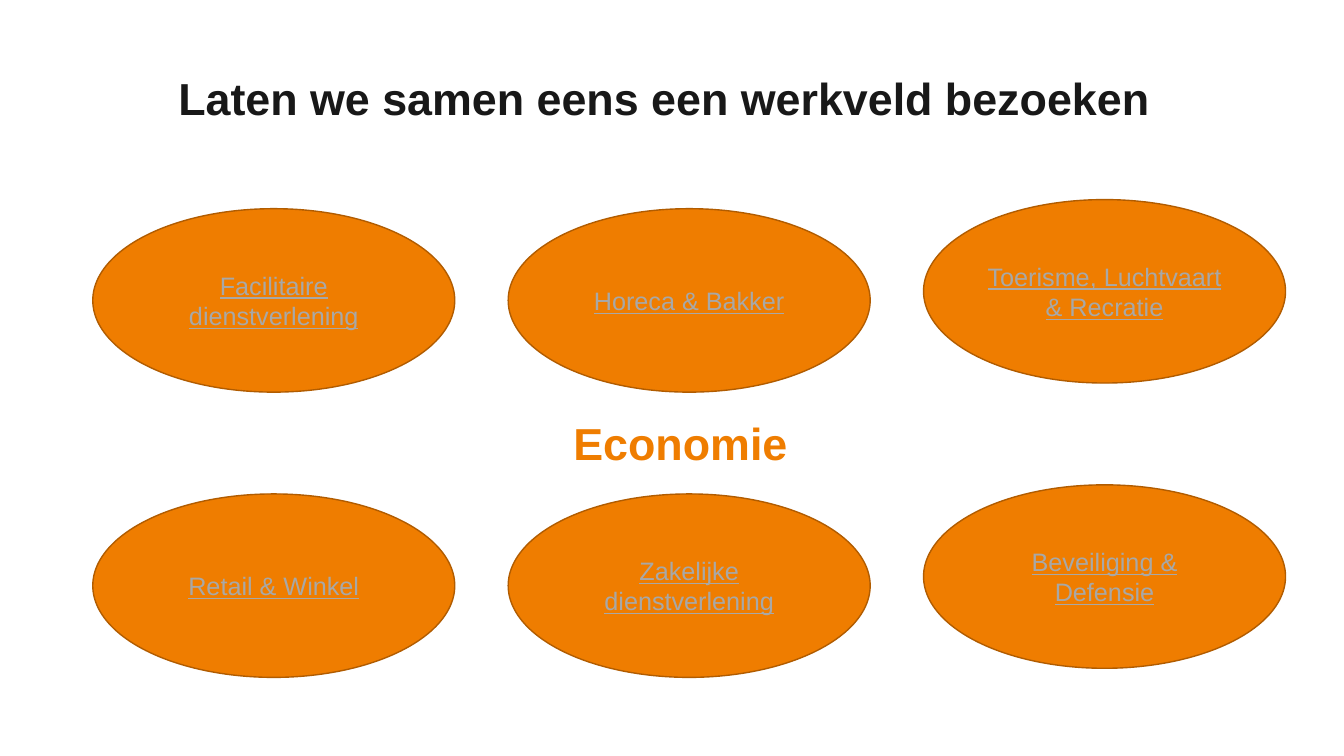
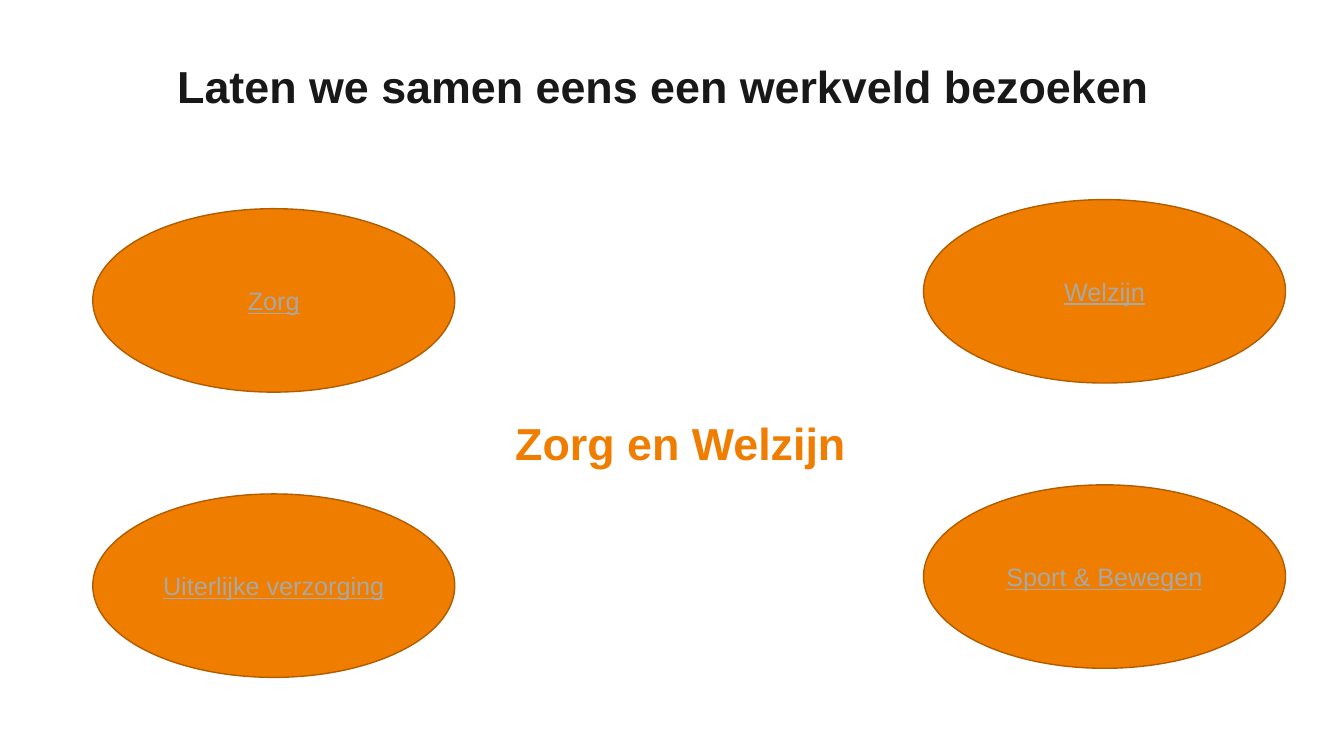
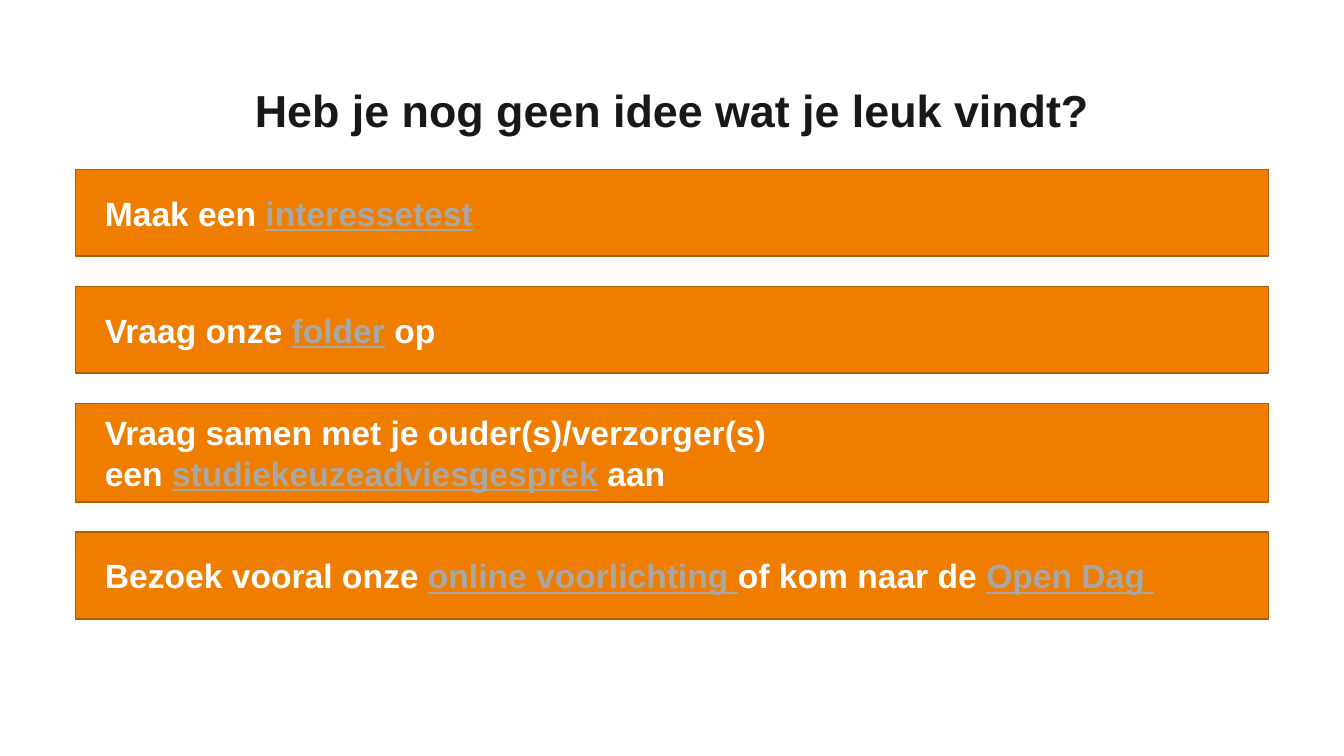
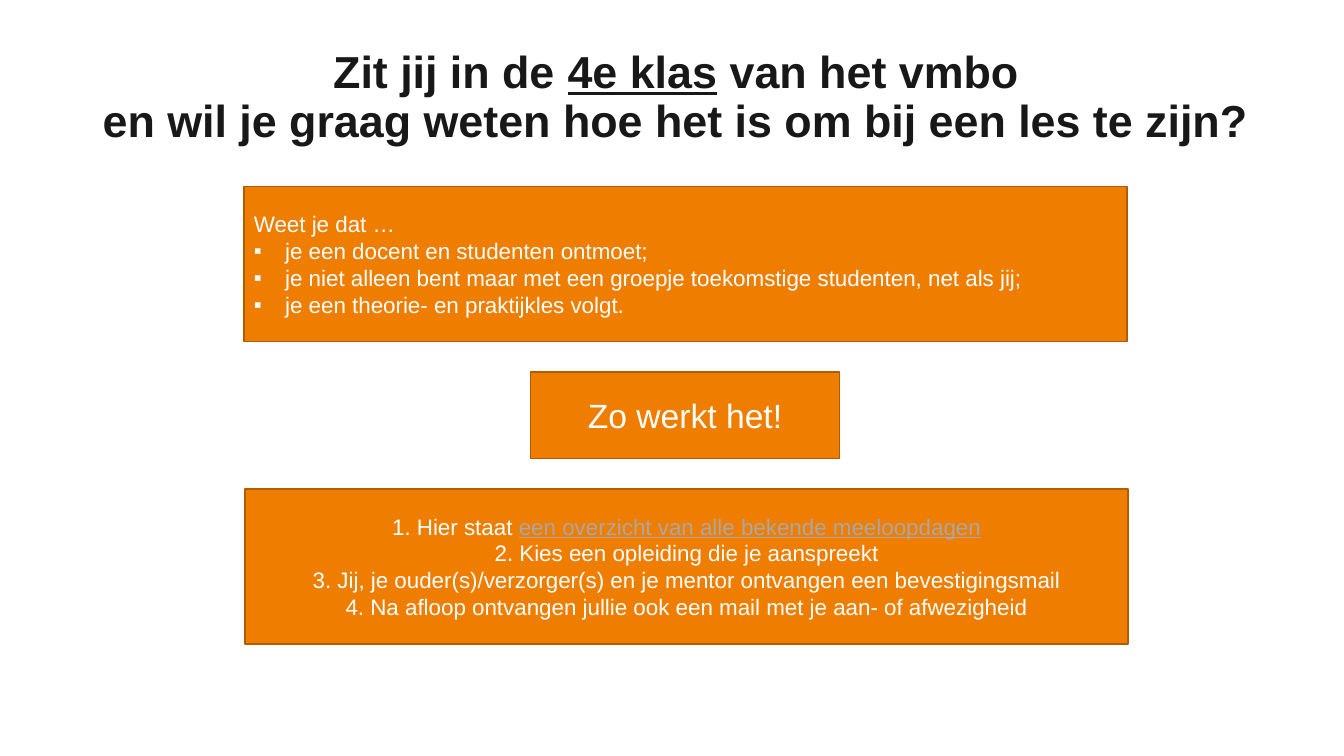
from lxml.etree import SubElement
from pptx import Presentation
from pptx.dml.color import RGBColor
from pptx.enum.shapes import MSO_SHAPE
from pptx.enum.text import MSO_ANCHOR, PP_ALIGN
from pptx.oxml.ns import qn
from pptx.util import Inches, Pt

ORANGE, BROWN, INK, WHITE, GREY = "EF7D00", "B15C00", "181818", "FFFFFF", "A8A8A7"
VISIT = "Laten we samen eens een werkveld bezoeken"
GAP = 0.3


def colour(code):
    return RGBColor.from_string(code)


def apply(target, **values):
    for name, value in values.items():
        setattr(target, name, value)


class Slides:
    font = "Arial"

    def __init__(self):
        self.deck = Presentation()
        apply(self.deck, slide_width=Inches(13.33), slide_height=Inches(7.5))
        self.page = None

    def new_page(self):
        self.page = self.deck.slides.add_slide(self.deck.slide_layouts[6])

    def fill_text(self, box, lines, size, ink=WHITE, marked=GREY, bold=False,
                  align=PP_ALIGN.CENTER, spacing=None, anchor=MSO_ANCHOR.MIDDLE):
        frame = box.text_frame
        apply(frame, word_wrap=True, vertical_anchor=anchor)
        for row, line in enumerate(lines):
            paragraph = frame.paragraphs[0] if row == 0 else frame.add_paragraph()
            apply(paragraph, alignment=align, line_spacing=spacing)
            if line.startswith("▪"):
                line = line[1:]
                self.bullet(paragraph)
            for order, piece in enumerate(line.split("|")):
                is_marked = order % 2 == 1
                for part_order, part in enumerate(piece.split("\n")):
                    if part_order:
                        paragraph.add_line_break()
                    span = paragraph.add_run()
                    span.text = part
                    apply(span.font, name=self.font, size=Pt(size), bold=bold,
                          underline=is_marked)
                    span.font.color.rgb = colour(marked if is_marked else ink)

    def bullet(self, paragraph):
        properties = paragraph._p.get_or_add_pPr()
        properties.set("marL", str(Inches(0.31)))
        properties.set("indent", str(-Inches(0.31)))
        SubElement(properties, qn("a:buFont")).set("typeface", self.font)
        SubElement(properties, qn("a:buChar")).set("char", "▪")

    def heading(self, text, left, top, width, height, ink=INK, **style):
        box = self.page.shapes.add_textbox(*map(Inches, (left, top, width, height)))
        self.fill_text(box, [text], 32, ink, marked=ink, bold=True, spacing=0.9, **style)

    def panel(self, kind, place, lines, size, inset=0.1, **style):
        box = self.page.shapes.add_shape(kind, *map(Inches, place))
        box.shadow.inherit = False
        box.fill.solid()
        box.fill.fore_color.rgb = colour(ORANGE)
        box.line.color.rgb = colour(BROWN)
        box.line.width = Pt(1)
        box.text_frame.margin_left = Inches(inset)
        self.fill_text(box, lines, size, **style)

    def sector(self, name, fields, left, top, height):
        self.new_page()
        self.heading(VISIT, left, top, 11.5, height, align=PP_ALIGN.LEFT)
        self.heading(name, 1, 4.14, 11.5, 0.64, ink=ORANGE, anchor=MSO_ANCHOR.TOP)
        for row, labels in enumerate(fields):
            for column, label in enumerate(labels):
                if label:
                    lift = 0.09 if column == 2 else 0
                    place = (0.92 + 4.12 * column, 2.07 + 2.83 * row - lift, 3.59, 1.82)
                    self.panel(MSO_SHAPE.OVAL, place, [f"|{label}"], 18)

    def stack(self, top, panels, **style):
        for left, width, height, lines, size, extra in panels:
            self.panel(MSO_SHAPE.RECTANGLE, (left, top, width, height), lines, size,
                       **style, **extra)
            top += height + GAP


def main():
    slides = Slides()

    slides.sector("Economie", [
        ["Facilitaire dienstverlening", "Horeca & Bakker", "Toerisme, Luchtvaart & Recratie"],
        ["Retail & Winkel", "Zakelijke dienstverlening", "Beveiliging & Defensie"],
    ], 1.67, 0.38, 1.24)

    slides.sector("Zorg en Welzijn", [
        ["Zorg", None, "Welzijn"],
        ["Uiterlijke verzorging", None, "Sport & Bewegen"],
    ], 1.66, 0.34, 1.09)

    slides.new_page()
    slides.heading("Heb je nog geen idee wat je leuk vindt?", 0.92, 0.4, 11.5, 1.45)
    steps = [
        ["Maak een |interessetest"],
        ["Vraag onze |folder| op"],
        ["Vraag samen met je ouder(s)/verzorger(s)", "een |studiekeuzeadviesgesprek| aan"],
        ["Bezoek vooral onze |online voorlichting |of kom naar de |Open Dag "],
    ]
    slides.stack(1.68, [
        (0.75, 11.83, 0.98 if len(lines) > 1 else 0.86, lines, 24, {}) for lines in steps
    ], inset=0.29, bold=True, align=PP_ALIGN.LEFT)

    slides.new_page()
    slides.heading("Zit jij in de |4e klas| van het vmbo\n"
                   "en wil je graag weten hoe het is om bij een les te zijn?",
                   0.43, 0.25, 12.55, 1.45)
    slides.stack(1.85, [
        (2.42, 8.76, 1.54, [
            "Weet je dat …",
            "▪je een docent en studenten ontmoet;",
            "▪je niet alleen bent maar met een groepje toekomstige studenten, net als jij;",
            "▪je een theorie- en praktijkles volgt.",
        ], 16, {"align": PP_ALIGN.LEFT}),
        (5.26, 3.07, 0.86, ["Zo werkt het!"], 24, {}),
        (2.43, 8.76, 1.54, [
            "1. Hier staat |een overzicht van alle bekende meeloopdagen",
            "2. Kies een opleiding die je aanspreekt",
            "3. Jij, je ouder(s)/verzorger(s) en je mentor ontvangen een bevestigingsmail",
            "4. Na afloop ontvangen jullie ook een mail met je aan- of afwezigheid",
        ], 16, {}),
    ])

    slides.deck.save("out.pptx")


if __name__ == "__main__":
    main()
